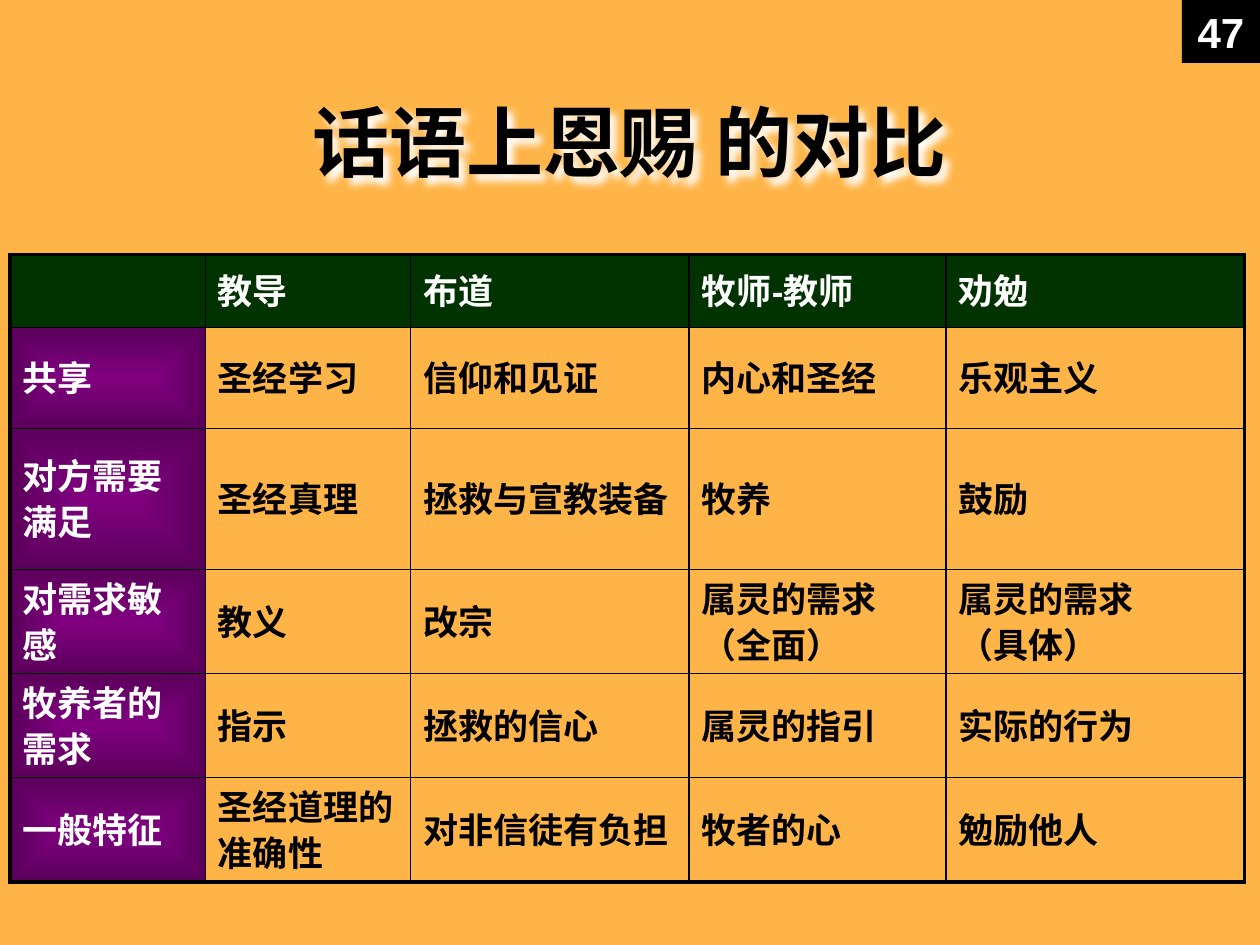
from dataclasses import dataclass

from lxml import etree
from pptx import Presentation
from pptx.dml.color import RGBColor
from pptx.enum.shapes import MSO_SHAPE
from pptx.enum.text import MSO_ANCHOR, MSO_AUTO_SIZE, PP_ALIGN
from pptx.oxml import parse_xml
from pptx.oxml.ns import nsdecls, qn
from pptx.util import Inches, Pt

RECTANGLE = MSO_SHAPE.RECTANGLE
MIDDLE = MSO_ANCHOR.MIDDLE
CENTER = PP_ALIGN.CENTER
GROW = MSO_AUTO_SIZE.SHAPE_TO_FIT_TEXT
TITLE_ONLY = 5


@dataclass(frozen=True)
class Theme:
    background: str = "FEB446"
    dark: str = "000000"
    light: str = "FFFFFF"
    header: str = "003300"
    label: str = "800080"
    label_shade: int = 46275
    title_size: float = 44
    number_size: float = 24
    cell_size: float = 20
    outer_line: float = 2.25
    inner_line: float = 1


@dataclass(frozen=True)
class TextStyle:
    size: float
    color: str
    font: str = "Arial"


THEME = Theme()
TITLE_STYLE = TextStyle(THEME.title_size, THEME.dark, "Times New Roman")
NUMBER_STYLE = TextStyle(THEME.number_size, THEME.light)
LABEL_STYLE = TextStyle(THEME.cell_size, THEME.light)
BODY_STYLE = TextStyle(THEME.cell_size, THEME.dark)

COLUMN_WIDTHS = (1.55, 1.63, 2.21, 2.04, 2.37)
ROW_HEIGHTS = (0.58, 0.8, 1.12, 0.76, 0.59, 0.6)
GIFT_ROWS = (
    ("", "教导", "布道", "牧师-教师", "劝勉"),
    ("共享", "圣经学习", "信仰和见证", "内心和圣经", "乐观主义"),
    ("对方需要满足", "圣经真理", "拯救与宣教装备", "牧养", "鼓励"),
    ("对需求敏感", "教义", "改宗", "属灵的需求\n（全面）", "属灵的需求\n（具体）"),
    ("牧养者的需求", "指示", "拯救的信心", "属灵的指引", "实际的行为"),
    ("一般特征", "圣经道理的准确性", "对非信徒有负担", "牧者的心", "勉励他人"),
)


def write_text(paragraph, text: str, style: TextStyle) -> None:
    for index, line in enumerate(text.split("\n")):
        if index:
            paragraph.add_line_break()
        run = paragraph.add_run()
        run.text = line
        run.font.name = style.font
        run.font.size = Pt(style.size)
        run.font.bold = True
        run.font.color.rgb = RGBColor.from_string(style.color)


def set_spacing(paragraph) -> None:
    paragraph.line_spacing = 0.9
    before = etree.SubElement(paragraph._p.get_or_add_pPr(), qn("a:spcBef"))
    etree.SubElement(before, qn("a:spcPct")).set("val", "20000")


def add_border(cell, side: str, width: float) -> None:
    cell._tc.get_or_add_tcPr().append(parse_xml(
        f'<a:ln{side} {nsdecls("a")} w="{Pt(width)}"><a:solidFill>'
        f'<a:srgbClr val="{THEME.dark}"/></a:solidFill></a:ln{side}>'))


def fill_label(cell) -> None:
    color = f'<a:srgbClr val="{THEME.label}"'
    cell._tc.get_or_add_tcPr().append(parse_xml(
        f'<a:gradFill {nsdecls("a")} rotWithShape="0"><a:gsLst>'
        f'<a:gs pos="0">{color}/></a:gs><a:gs pos="100000">{color}>'
        f'<a:shade val="{THEME.label_shade}"/></a:srgbClr></a:gs></a:gsLst>'
        '<a:path path="shape"><a:fillToRect l="50000" t="50000" r="50000" b="50000"/>'
        '</a:path></a:gradFill>'))


def add_title(slide) -> None:
    title = slide.shapes.title
    title.left, title.top = Inches(0), Inches(0.33)
    title.width, title.height = Inches(10), Inches(1.67)
    title.text_frame.vertical_anchor = MIDDLE
    title.text_frame.word_wrap = True
    paragraph = title.text_frame.paragraphs[0]
    paragraph.alignment = CENTER
    set_spacing(paragraph)
    write_text(paragraph, "话语上恩赐 的对比", TITLE_STYLE)
    # Soft light shadow behind the letters
    title._element.spPr.append(parse_xml(
        f'<a:effectLst {nsdecls("a")}><a:outerShdw blurRad="{Pt(4)}" dist="{Pt(4)}" '
        f'dir="2700000" algn="ctr"><a:srgbClr val="{THEME.light}"/>'
        '</a:outerShdw></a:effectLst>'))


def add_gift_table(slide) -> None:
    table = slide.shapes.add_table(
        len(ROW_HEIGHTS), len(COLUMN_WIDTHS),
        Inches(0.08), Inches(2.02), Inches(9.8), Inches(4.7)).table
    table.first_row = table.horz_banding = False
    for column, width in zip(table.columns, COLUMN_WIDTHS):
        column.width = Inches(width)
    for row, height in zip(table.rows, ROW_HEIGHTS):
        row.height = Inches(height)
    last_row, last_column = len(ROW_HEIGHTS) - 1, len(COLUMN_WIDTHS) - 1

    for r, texts in enumerate(GIFT_ROWS):
        for c, text in enumerate(texts):
            cell = table.cell(r, c)
            cell.vertical_anchor = MIDDLE
            # Heavy frame outside, thin grid inside
            edges = {"L": c == 0, "R": c == last_column, "T": r == 0, "B": r == last_row}
            for side, outer in edges.items():
                add_border(cell, side, THEME.outer_line if outer else THEME.inner_line)
            # Green header, purple label column, clear body
            if r == 0:
                cell.fill.solid()
                cell.fill.fore_color.rgb = RGBColor.from_string(THEME.header)
            elif c == 0:
                fill_label(cell)
            else:
                cell.fill.background()
            if text:
                paragraph = cell.text_frame.paragraphs[0]
                set_spacing(paragraph)
                write_text(paragraph, text, LABEL_STYLE if r == 0 or c == 0 else BODY_STYLE)


def add_page_number(slide) -> None:
    box = slide.shapes.add_shape(RECTANGLE, Inches(9.38), Inches(0), Inches(0.62), Inches(0.5))
    box.shadow.inherit = False
    box.fill.solid()
    box.fill.fore_color.rgb = RGBColor.from_string(THEME.dark)
    box.line.fill.background()
    frame = box.text_frame
    frame.word_wrap = False
    frame.auto_size = GROW
    frame.vertical_anchor = MSO_ANCHOR.TOP
    paragraph = frame.paragraphs[0]
    paragraph.alignment = CENTER
    write_text(paragraph, "47", NUMBER_STYLE)


def main() -> None:
    presentation = Presentation()
    presentation.slide_width, presentation.slide_height = Inches(10), Inches(7.5)
    slide = presentation.slides.add_slide(presentation.slide_layouts[TITLE_ONLY])
    slide.background.fill.solid()
    slide.background.fill.fore_color.rgb = RGBColor.from_string(THEME.background)
    add_title(slide)
    add_gift_table(slide)
    add_page_number(slide)
    presentation.save("out.pptx")


if __name__ == "__main__":
    main()
